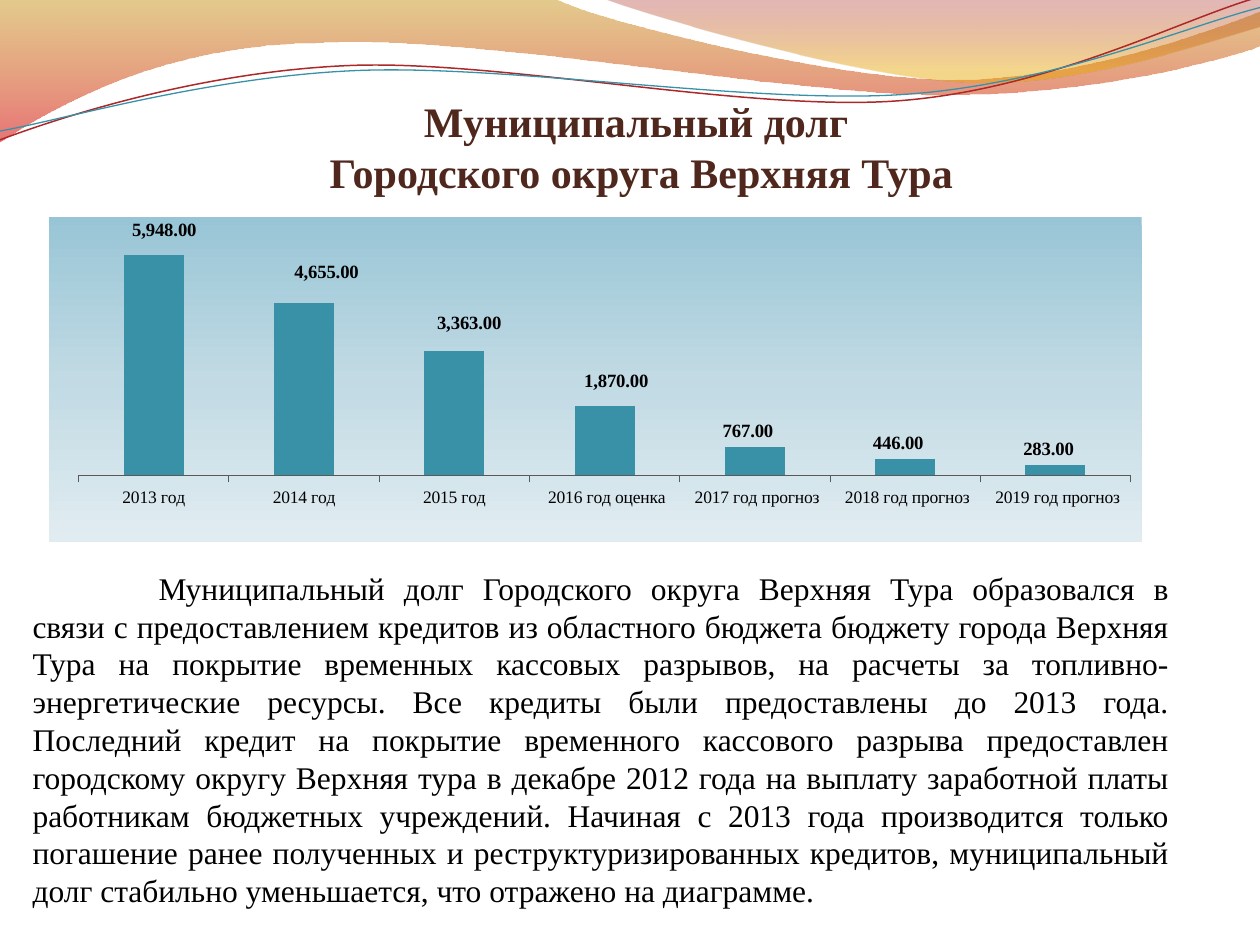
from math import cos, radians, sin

from lxml import etree
from pptx import Presentation
from pptx.chart.data import CategoryChartData
from pptx.dml.color import RGBColor
from pptx.enum.chart import XL_CHART_TYPE, XL_LABEL_POSITION, XL_TICK_MARK
from pptx.enum.text import MSO_ANCHOR, MSO_AUTO_SIZE, PP_ALIGN
from pptx.oxml import parse_xml
from pptx.oxml.ns import nsdecls, qn
from pptx.util import Inches, Pt

COLORS = {
    "text": "000000", "title": "4F271C", "teal": "3891A7", "red": "AC2829", "axis": "595959",
    "ochre": "C38B00", "scarlet": "D60305", "wine": "A11112", "amber": "E9A600",
    "sky": "98C5D6", "mist": "C1DAE4", "haze": "E1ECF1",
}
FONT = "Times New Roman"
NUM_FMT = "_-* #,##0.00_р_._-"


def gradient(stops):
    """Vertical gradient fill from (position %, colour name, opacity %) stops."""
    gs = "".join(
        f'<a:gs pos="{pos * 1000}"><a:srgbClr val="{COLORS[name]}">'
        f'<a:alpha val="{alpha * 1000}"/></a:srgbClr></a:gs>'
        for pos, name, alpha in stops)
    return parse_xml(f'<a:gradFill {nsdecls("a")} rotWithShape="1"><a:gsLst>{gs}</a:gsLst>'
                     '<a:lin ang="5400000" scaled="0"/></a:gradFill>')


def add_curve(shapes, segments, closed, tilt=0, center=(0, 0)):
    """Freeform through segments: 2 numbers are a point, 6 a Bezier curve."""
    c, n = cos(radians(tilt)), sin(radians(tilt))
    pts = []
    for seg in segments:
        for x, y in zip(seg[::2], seg[1::2]):
            dx, dy = x - center[0], y - center[1]
            pts.append((Inches(center[0] + dx * c + dy * n), Inches(center[1] - dx * n + dy * c)))
    fb = shapes.build_freeform(*pts[0], scale=1.0)
    fb.add_line_segments(pts[1:], close=closed)
    sp = fb.convert_to_shape()
    sp.shadow.inherit = False
    sp.rotation = tilt % 360
    # Join each curve's three points into one Bezier segment
    lines = iter(list(sp.element.iter(qn("a:lnTo"))))
    for seg in segments[1:]:
        first = next(lines)
        if len(seg) == 6:
            first.tag = qn("a:cubicBezTo")
            for line in (next(lines), next(lines)):
                first.append(line[0])
                line.getparent().remove(line)
    return sp


prs = Presentation()
prs.slide_width, prs.slide_height = Inches(10), Inches(7.5)
s = prs.slides.add_slide(prs.slide_layouts[5])

# Translucent waves along the top
waves = [
    ([(0, -0.01), (4.4, -0.01), (4.76, 0.17, 6.64, 0.63, 7.58, 0.63),
      (8.53, 0.63, 9.58, 0.26, 10, 0.09), (10.01, 0.36),
      (9.83, 0.44, 8.7, 0.76, 7.46, 0.75), (6.22, 0.75, 3.82, 0.28, 2.57, 0.34),
      (1.29, 0.35, 0.46, 0.83, -0.01, 1.13)],
     [(0, "ochre", 45), (100, "scarlet", 55)]),
    ([(4.79, -0.01), (5.09, 0.11, 6.82, 0.62, 7.69, 0.65),
      (8.56, 0.69, 9.61, 0.32, 10, 0.21), (10, 0)],
     [(0, "wine", 30), (80, "amber", 45)]),
]
for segments, stops in waves:
    sp = add_curve(s.shapes, segments, True)
    sp.line.fill.background()
    sp.element.spPr.find(qn("a:custGeom")).addnext(gradient(stops))

# Thin tilted wave lines
wave_lines = [
    ([(0, 1.11), (0.48, 0.93, 1.58, 0.57, 2.77, 0.52),
      (3.95, 0.47, 5.93, 0.89, 7.13, 0.8), (8.33, 0.71, 9.38, 0.15, 9.98, -0.02)],
     "red", 0.85),
    ([(0, 1.04), (0.47, 0.96, 1.64, 0.61, 2.83, 0.56),
      (4.03, 0.51, 5.97, 0.83, 7.17, 0.75), (8.36, 0.67, 9.41, 0.21, 10, 0.06)],
     "teal", 0.75),
]
for segments, color, width in wave_lines:
    sp = add_curve(s.shapes, segments, False, tilt=-2.7, center=(4.99, 0.58))
    sp.fill.background()
    sp.line.color.rgb = RGBColor.from_string(COLORS[color])
    sp.line.width = Pt(width)

# Title, brought in front of the waves
title = s.shapes.title
title.element.getparent().append(title.element)
title.left, title.top, title.width, title.height = map(Inches, (0.55, 0.62, 9.08, 0.94))
tf = title.text_frame
tf.vertical_anchor = MSO_ANCHOR.BOTTOM
tf.margin_left = tf.margin_right = tf.margin_bottom = 0
tf.margin_top = Inches(0.05)
p = tf.paragraphs[0]
p.alignment = PP_ALIGN.CENTER
for i, line in enumerate(("Муниципальный долг ", "Городского округа Верхняя Тура")):
    if i:
        p.add_line_break()
    r = p.add_run()
    r.text = line
    r.font.name, r.font.size, r.font.bold = FONT, Pt(24), True
    r.font.color.rgb = RGBColor.from_string(COLORS["title"])

# Explanation
tf = s.shapes.add_textbox(*map(Inches, (0.16, 4.45, 9.22, 2.83))).text_frame
tf.word_wrap = True
tf.auto_size = MSO_AUTO_SIZE.SHAPE_TO_FIT_TEXT
tf.vertical_anchor = MSO_ANCHOR.MIDDLE
p = tf.paragraphs[0]
p.alignment = PP_ALIGN.JUSTIFY
p._p.get_or_add_pPr().set("indent", str(Inches(1)))
r = p.add_run()
r.text = (
    "Муниципальный долг Городского округа Верхняя Тура образовался в связи с предоставлением "
    "кредитов из областного бюджета бюджету города Верхняя Тура на покрытие временных кассовых "
    "разрывов, на расчеты за топливно-энергетические ресурсы. Все кредиты были предоставлены "
    "до 2013 года. Последний кредит на покрытие временного кассового разрыва предоставлен "
    "городскому округу Верхняя тура в декабре 2012 года на выплату заработной платы работникам "
    "бюджетных учреждений. Начиная с 2013 года производится только погашение ранее полученных "
    "и реструктуризированных кредитов, муниципальный долг стабильно уменьшается, что отражено "
    "на диаграмме.")
r.font.name, r.font.size = FONT, Pt(18)
r.font.color.rgb = RGBColor.from_string(COLORS["text"])

# Debt chart
data = CategoryChartData(number_format=NUM_FMT)
data.categories = ["2013 год", "2014 год", "2015 год", " 2016 год оценка",
                   " 2017 год прогноз", " 2018 год прогноз", " 2019 год прогноз"]
data.add_series("Series 1", (5948, 4655, 3363, 1870, 767, 446, 283))
chart = s.shapes.add_chart(XL_CHART_TYPE.COLUMN_CLUSTERED,
                           *map(Inches, (0.39, 1.72, 8.67, 2.58)), data).chart
chart.has_legend = chart.has_title = False
chart.font.name, chart.font.size = "Calibri", Pt(10)
chart.font.color.rgb = RGBColor.from_string(COLORS["text"])

axis = chart.category_axis
axis.major_tick_mark = XL_TICK_MARK.OUTSIDE
axis.tick_labels.font.name, axis.tick_labels.font.size = FONT, Pt(10)
axis.format.line.color.rgb = RGBColor.from_string(COLORS["axis"])
axis.format.line.width = Pt(0.5)
axis = chart.value_axis
axis.visible = axis.has_major_gridlines = False
axis.minimum_scale, axis.maximum_scale = 0, 7000

plot = chart.plots[0]
plot.gap_width, plot.vary_by_categories = 150, False
series = plot.series[0]
series.format.fill.solid()
series.format.fill.fore_color.rgb = RGBColor.from_string(COLORS["teal"])

# Value labels, the first four shifted from their columns
labels = series.data_labels
labels.show_value = True
labels.position = XL_LABEL_POSITION.OUTSIDE_END
labels.number_format, labels.number_format_is_linked = NUM_FMT, False
shifts = [(0.016, -0.03), (0.027, -0.05), (0.02, -0.04), (0.017, -0.03)]
point_labels = [series.points[i].data_label for i in range(len(shifts))]
for label in point_labels:
    label.position = XL_LABEL_POSITION.OUTSIDE_END
for font in [labels.font] + [label.font for label in point_labels]:
    font.name, font.size, font.bold = FONT, Pt(10.7), True
    font.color.rgb = RGBColor.from_string(COLORS["text"])
for label, (x, y) in zip(chart.element.iter(qn("c:dLbl")), shifts):
    idx = label.find(qn("c:idx"))
    idx.addnext(parse_xml(f'<c:numFmt {nsdecls("c")} formatCode="{NUM_FMT}" sourceLinked="0"/>'))
    idx.addnext(parse_xml(f'<c:layout {nsdecls("c")}><c:manualLayout><c:x val="{x}"/>'
                          f'<c:y val="{y}"/></c:manualLayout></c:layout>'))
for leader in chart.element.iter(qn("c:showLeaderLines")):
    leader.set("val", "0")

# Plot position and chart background
plot_area = chart.element.find(".//" + qn("c:plotArea"))
for old in plot_area.findall(qn("c:layout")):
    plot_area.remove(old)
layout = etree.SubElement(plot_area, qn("c:layout"))
plot_area.insert(0, layout)
manual = etree.SubElement(layout, qn("c:manualLayout"))
for tag, val in (("layoutTarget", "inner"), ("xMode", "edge"), ("yMode", "edge"),
                 ("x", 0.027), ("y", 0), ("w", 0.963), ("h", 0.795)):
    etree.SubElement(manual, qn("c:" + tag)).set("val", str(val))
sp_pr = parse_xml(f'<c:spPr {nsdecls("c", "a")}><a:ln><a:noFill/></a:ln></c:spPr>')
sp_pr.insert(0, gradient([(0, "sky", 100), (50, "mist", 100), (100, "haze", 100)]))
chart.element.find(qn("c:chart")).addnext(sp_pr)

prs.save("out.pptx")
